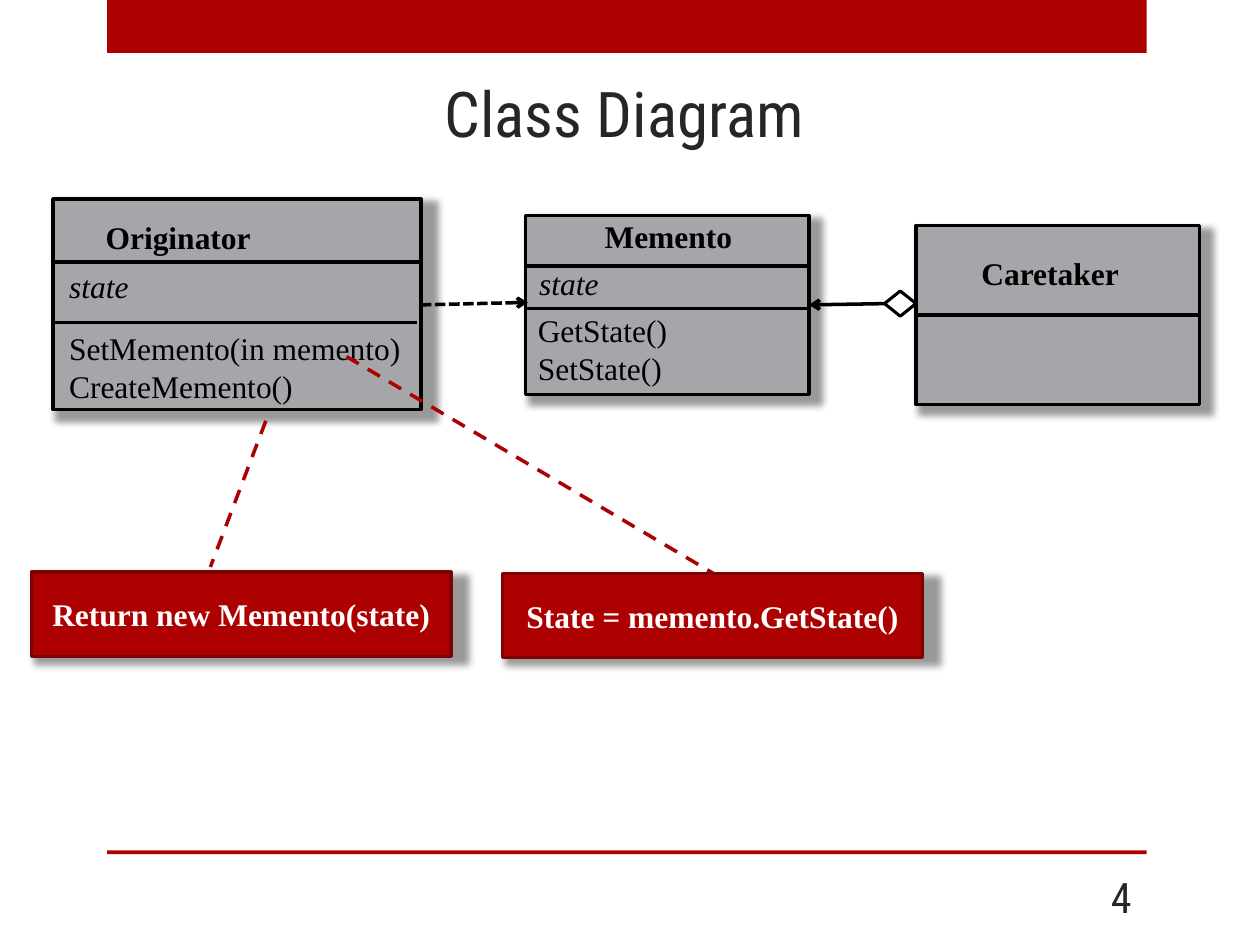
"""Builds the class diagram slide of the Memento pattern."""
from lxml.etree import SubElement
from pptx import Presentation
from pptx.dml.color import RGBColor
from pptx.enum.dml import MSO_LINE
from pptx.enum.shapes import MSO_CONNECTOR, MSO_SHAPE
from pptx.enum.text import MSO_ANCHOR, MSO_AUTO_SIZE, PP_ALIGN
from pptx.oxml.ns import qn
from pptx.util import Inches, Pt

COLORS = {"red": "AD0101", "edge": "800101", "gray": "A5A5AA",
          "ink": "262626", "black": "000000", "white": "FFFFFF"}
SERIF = "Times New Roman"
SANS = "Roboto Condensed"


def tint(name):
    return RGBColor.from_string(COLORS[name])


class Board:
    def __init__(self, slide):
        self.slide = slide
        self.shapes = slide.shapes

    def text(self, frame, lines, size=18, font=SERIF, color="black",
             bold=False, italic=False, align=PP_ALIGN.LEFT):
        for i, line in enumerate(lines):
            para = frame.add_paragraph() if i else frame.paragraphs[0]
            para.alignment = align
            run = para.add_run()
            run.text = line
            run.font.size = Pt(size)
            run.font.name = font
            run.font.bold = bold
            run.font.italic = italic
            run.font.color.rgb = tint(color)

    def title(self, text, *box):
        head = self.shapes.title
        head.left, head.top, head.width, head.height = map(Inches, box)
        head.text_frame.vertical_anchor = MSO_ANCHOR.MIDDLE
        self.text(head.text_frame, [text], 36, SANS, "ink", align=PP_ALIGN.CENTER)

    def shape(self, box, fill=None, edge=None, width=2, kind=MSO_SHAPE.RECTANGLE):
        item = self.shapes.add_shape(kind, *map(Inches, box))
        item.shadow.inherit = False
        if fill:
            item.fill.solid()
            item.fill.fore_color.rgb = tint(fill)
        else:
            item.fill.background()
        if edge:
            item.line.color.rgb = tint(edge)
            item.line.width = Pt(width)
        else:
            item.line.fill.background()
        return item

    def card(self, box, fill, edge, width=2):
        item = self.shape(box, fill, edge, width)
        effects = item._element.spPr.find(qn("a:effectLst"))
        shade = SubElement(effects, qn("a:outerShdw"), blurRad=str(Pt(4)),
                           dist=str(Pt(3)), dir="2700000", sx="103000",
                           sy="103000", algn="tl", rotWithShape="0")
        color = SubElement(shade, qn("a:srgbClr"), val=COLORS["black"])
        SubElement(color, qn("a:alpha"), val="40000")
        return item

    def note(self, text, *box):
        frame = self.card(box, "red", "edge", 1.75).text_frame
        frame.word_wrap = True
        frame.vertical_anchor = MSO_ANCHOR.MIDDLE
        self.text(frame, [text], color="white", bold=True, align=PP_ALIGN.CENTER)

    def label(self, lines, *box, **style):
        frame = self.shapes.add_textbox(*map(Inches, box)).text_frame
        frame.word_wrap = False
        frame.auto_size = MSO_AUTO_SIZE.SHAPE_TO_FIT_TEXT
        self.text(frame, lines, **style)

    def number(self, text, *box):
        frame = self.shapes.add_textbox(*map(Inches, box)).text_frame
        frame.word_wrap = True
        frame.vertical_anchor = MSO_ANCHOR.MIDDLE
        self.text(frame, [text], 24, SANS, "ink", align=PP_ALIGN.RIGHT)

    def line(self, x1, y1, x2, y2, color="black", dash=None, arrow=False):
        item = self.shapes.add_connector(
            MSO_CONNECTOR.STRAIGHT, *map(Inches, (x1, y1, x2, y2)))
        item.line.color.rgb = tint(color)
        item.line.width = Pt(2)
        if dash:
            item.line.dash_style = dash
        if arrow:
            outline = item._element.spPr.find(qn("a:ln"))
            SubElement(outline, qn("a:tailEnd"), type="arrow")
        SubElement(item._element.spPr, qn("a:effectLst"))


def main():
    deck = Presentation()
    deck.slide_width, deck.slide_height = Inches(10), Inches(7.5)
    board = Board(deck.slides.add_slide(deck.slide_layouts[5]))

    for top, height in ((0, 0.42), (6.75, 0.03)):
        board.shape((0.85, top, 8.25, height), "red")
    board.title("Class Diagram", 0.83, 0.53, 8.25, 0.72)
    board.number("4", 8.25, 6.92, 0.83, 0.4)

    for box in ((0.42, 1.58, 2.92, 1.67), (4.17, 1.71, 2.25, 1.42),
                (7.27, 1.79, 2.25, 1.42)):
        board.card(box, "gray", "black")
    for left, right, y in ((0.44, 3.33, 2.08), (0.42, 3.31, 2.56),
                           (4.17, 6.42, 2.11), (4.17, 6.42, 2.45),
                           (7.27, 9.52, 2.5)):
        board.line(left, y, right, y)

    board.label(["Originator"], 0.74, 1.68, 1.37, 0.4, bold=True)
    board.label(["Memento"], 4.69, 1.67, 1.23, 0.4, bold=True, align=PP_ALIGN.CENTER)
    board.label(["Caretaker"], 7.69, 1.97, 1.31, 0.4, bold=True)
    board.label(["state"], 0.45, 2.07, 0.68, 0.4, italic=True)
    board.label(["state"], 4.18, 2.05, 0.68, 0.4, italic=True)
    board.label(["SetMemento(in memento)", "CreateMemento()"], 0.45, 2.56, 2.86, 0.71)
    board.label(["GetState()", "SetState()"], 4.17, 2.42, 1.26, 0.71)

    board.line(3.34, 2.42, 4.19, 2.4, dash=MSO_LINE.SQUARE_DOT, arrow=True)
    board.line(7.02, 2.41, 6.42, 2.42, arrow=True)
    board.shape((7.02, 2.31, 0.25, 0.2), None, "black", 1.75, MSO_SHAPE.DIAMOND)

    board.note("Return new Memento(state)", 0.25, 4.54, 3.33, 0.67)
    board.line(2.11, 3.34, 1.67, 4.5, "red", MSO_LINE.DASH)
    board.line(2.75, 2.83, 5.66, 4.55, "red", MSO_LINE.DASH)
    board.note("State = memento.GetState()", 3.99, 4.55, 3.33, 0.67)

    deck.save("out.pptx")


if __name__ == "__main__":
    main()
